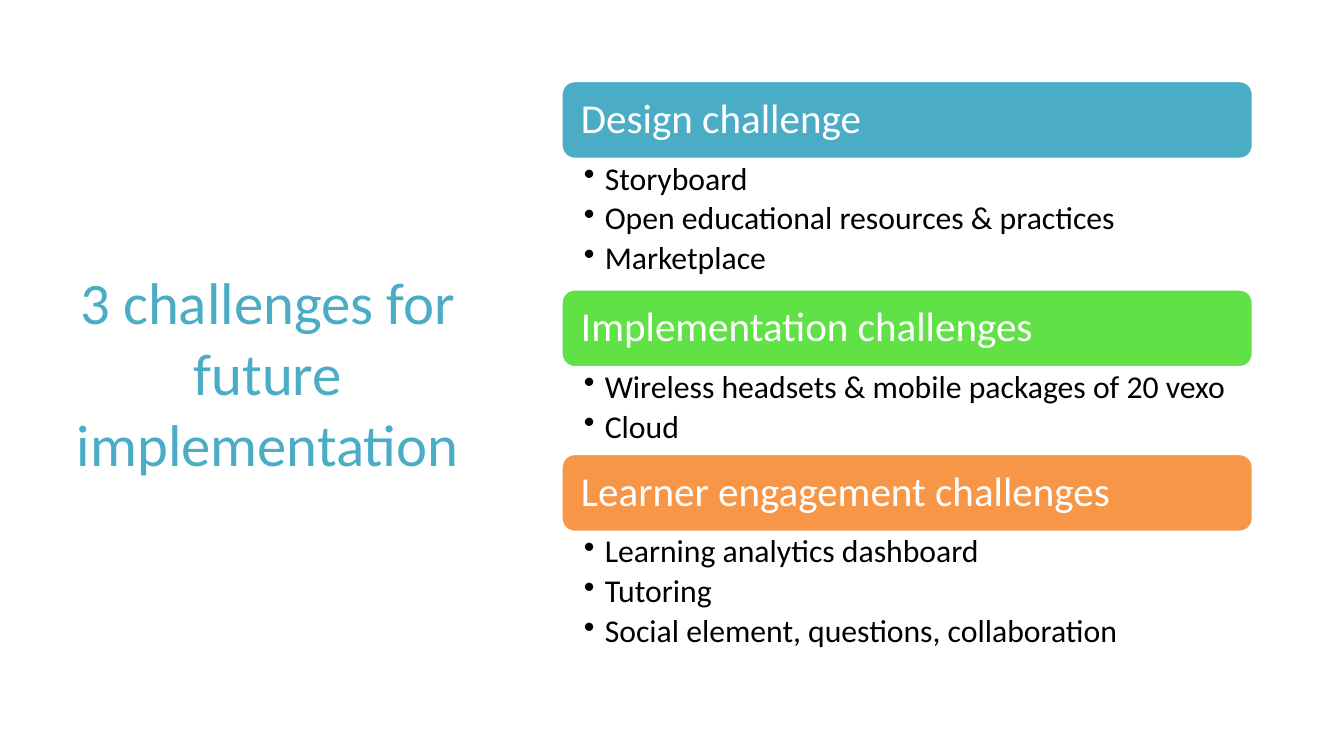
import pptx
import pptx.util
import pptx.dml.color
import pptx.enum.shapes
import pptx.enum.text
import lxml.etree
import pptx.oxml.ns

EMU_PER_PX = 9144
FONT = "Calibri"
TEAL = "4BACC6"
WHITE = "FFFFFF"
BLACK = "000000"
LEFT, TOP, WIDTH = 836, 121, 1028
BAR_HEIGHT = 115
ITEM_HEIGHT = 65
BULLET_INDENT = 31

CHALLENGES = [
    ("Design challenge", TEAL,
     ["Storyboard", "Open educational resources & practices", "Marketplace"]),
    ("Implementation challenges", "60E146",
     ["Wireless headsets & mobile packages of 20 vexo", "Cloud"]),
    ("Learner engagement challenges", "F79646",
     ["Learning analytics dashboard", "Tutoring",
      "Social element, questions, collaboration"]),
]


def px(length):
    return pptx.util.Emu(length * EMU_PER_PX)


def rgb(color):
    return pptx.dml.color.RGBColor.from_string(color)


def add_bullet(paragraph):
    properties = paragraph._p.get_or_add_pPr()
    properties.set("marL", str(px(BULLET_INDENT)))
    properties.set("indent", str(-px(BULLET_INDENT)))
    bullet = lxml.etree.SubElement(properties, pptx.oxml.ns.qn("a:buChar"))
    bullet.set("char", "•")


def write_text(shape, lines, size, color, insets, anchor="MIDDLE", align="LEFT",
               line_spacing=None, space_after=0, bullets=False):
    frame = shape.text_frame
    frame.word_wrap = True
    frame.vertical_anchor = pptx.enum.text.MSO_ANCHOR[anchor]
    (frame.margin_left, frame.margin_top,
     frame.margin_right, frame.margin_bottom) = map(px, insets)
    for index, line in enumerate(lines):
        paragraph = frame.add_paragraph() if index else frame.paragraphs[0]
        if bullets:
            add_bullet(paragraph)
        paragraph.alignment = pptx.enum.text.PP_ALIGN[align]
        paragraph.line_spacing = line_spacing
        paragraph.space_after = pptx.util.Pt(space_after)
        run = paragraph.add_run()
        run.text = line
        run.font.name = FONT
        run.font.size = pptx.util.Pt(size)
        run.font.color.rgb = rgb(color)


def add_title(slide, title):
    box = slide.shapes.add_textbox(px(86), px(102), px(625), px(903))
    write_text(box, [title], 63, TEAL, (15, 7, 15, 7), align="CENTER")


def add_bar(slide, top, heading, color):
    bar = slide.shapes.add_shape(
        pptx.enum.shapes.MSO_SHAPE.ROUNDED_RECTANGLE,
        px(LEFT), px(top), px(WIDTH), px(BAR_HEIGHT))
    bar.shadow.inherit = False
    bar.fill.solid()
    bar.fill.fore_color.rgb = rgb(color)
    bar.line.color.rgb = rgb(WHITE)
    bar.line.width = pptx.util.Pt(2)
    write_text(bar, [heading], 44, WHITE, (23, 18, 23, 18), line_spacing=0.9)


def add_items(slide, top, items, height):
    box = slide.shapes.add_textbox(px(LEFT), px(top), px(WIDTH), px(height))
    write_text(box, items, 34, BLACK, (33, 6, 34, 6), anchor="TOP",
               line_spacing=0.9, space_after=6, bullets=True)


def main():
    deck = pptx.Presentation()
    deck.slide_width, deck.slide_height = px(2000), px(1125)
    slide = deck.slides.add_slide(deck.slide_layouts[6])
    add_title(slide, "3 challenges for future implementation")
    top = TOP
    for heading, color, items in CHALLENGES:
        add_bar(slide, top, heading, color)
        top += BAR_HEIGHT
        items_height = ITEM_HEIGHT * len(items)
        add_items(slide, top, items, items_height)
        top += items_height
    deck.save("out.pptx")


if __name__ == "__main__":
    main()
